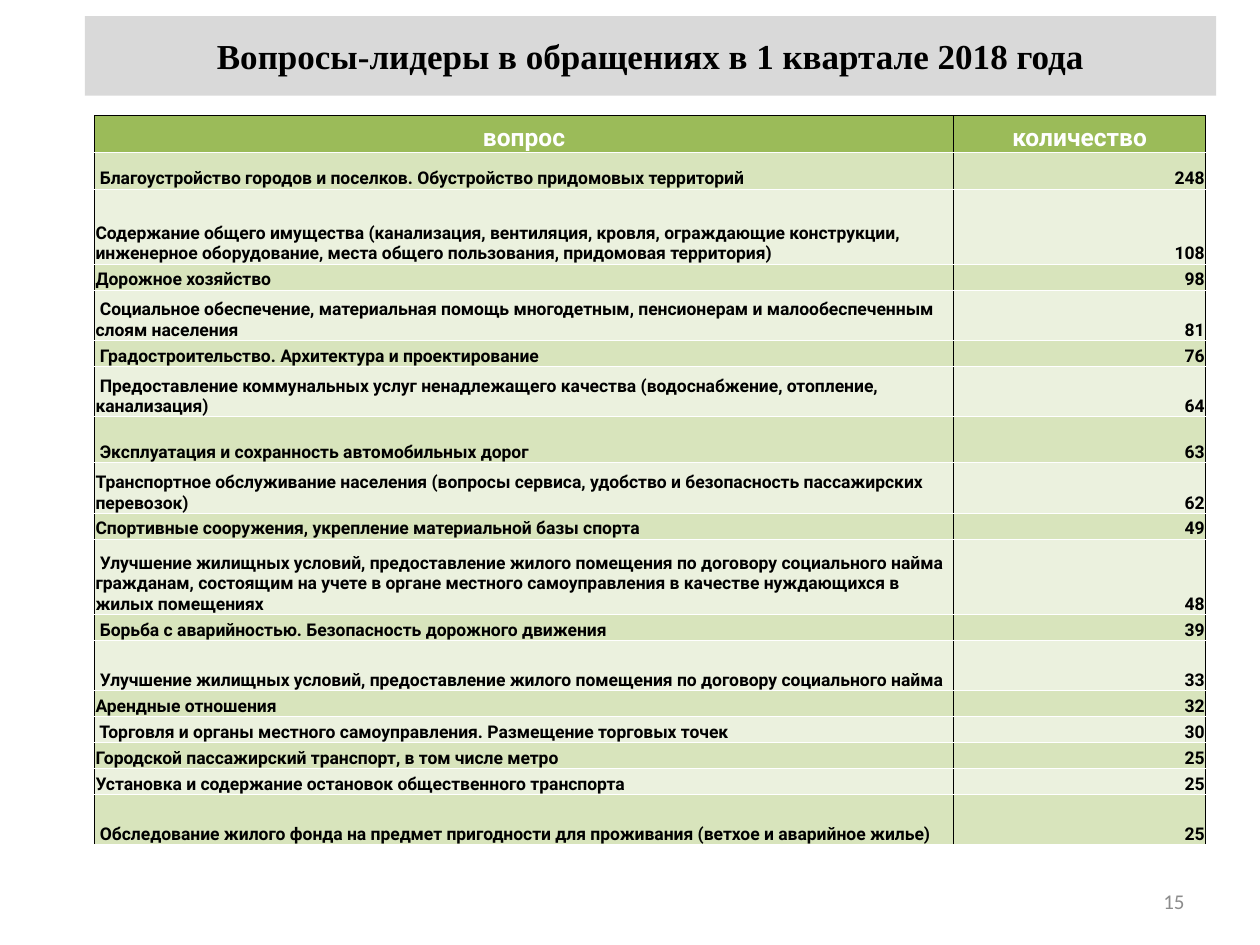
"""Build a slide with a table of the leading questions in appeals."""
import dataclasses

import pptx
import pptx.dml.color
import pptx.enum.text
import pptx.oxml
import pptx.oxml.ns
import pptx.util

Pt = pptx.util.Pt
Align = pptx.enum.text.PP_ALIGN
Anchor = pptx.enum.text.MSO_ANCHOR


@dataclasses.dataclass(frozen=True)
class Font:
    name: str
    size: float
    color: str
    bold: bool = True


@dataclasses.dataclass(frozen=True)
class Theme:
    title: Font = Font("Times New Roman", 20, "000000")
    head: Font = Font("Roboto", 14, "FFFFFF")
    body: Font = Font("Roboto", 10, "000000")
    number: Font = Font("Calibri", 12, "8C8C8C", False)
    banner: str = "D9D9D9"
    green: str = "9BBB59"
    bands: tuple[str, str] = ("D8E4BC", "EBF1DE")
    dark: str = "000000"
    light: str = "FFFFFF"


@dataclasses.dataclass(frozen=True)
class Row:
    topic: str
    count: str
    height: float


THEME = Theme()
LOW, MID, TALL = 14.8, 28.8, 43
HEAD = Row("вопрос", "количество", 21)
ROWS = [
    Row(" Благоустройство городов и поселков. Обустройство придомовых территорий", "248", 21),
    Row("Содержание общего имущества (канализация, вентиляция, кровля, ограждающие конструкции, "
        "инженерное оборудование, места общего пользования, придомовая территория)", "108", TALL),
    Row("Дорожное хозяйство", "98", LOW),
    Row(" Социальное обеспечение, материальная помощь многодетным, пенсионерам и "
        "малообеспеченным слоям населения", "81", MID),
    Row(" Градостроительство. Архитектура и проектирование", "76", LOW),
    Row(" Предоставление коммунальных услуг ненадлежащего качества (водоснабжение, отопление, "
        "канализация)", "64", MID),
    Row(" Эксплуатация и сохранность автомобильных дорог", "63", 26.4),
    Row("Транспортное обслуживание населения (вопросы сервиса, удобство и безопасность "
        "пассажирских перевозок)", "62", MID),
    Row("Спортивные сооружения, укрепление материальной базы спорта", "49", LOW),
    Row(" Улучшение жилищных условий, предоставление жилого помещения по договору социального "
        "найма гражданам, состоящим на учете в органе местного самоуправления в качестве "
        "нуждающихся в жилых помещениях", "48", TALL),
    Row(" Борьба с аварийностью. Безопасность дорожного движения", "39", LOW),
    Row(" Улучшение жилищных условий, предоставление жилого помещения по договору социального "
        "найма", "33", MID),
    Row("Арендные отношения", "32", LOW),
    Row(" Торговля и органы местного самоуправления. Размещение торговых точек", "30", LOW),
    Row("Городской пассажирский транспорт, в том числе метро", "25", LOW),
    Row("Установка и содержание остановок общественного транспорта", "25", LOW),
    Row(" Обследование жилого фонда на предмет пригодности для проживания (ветхое и аварийное "
        "жилье)", "25", MID),
]


def apply(item: object, values: dict) -> None:
    for name, value in values.items():
        setattr(item, name, value)


def rgb(color: str) -> pptx.dml.color.RGBColor:
    return pptx.dml.color.RGBColor.from_string(color)


def paint(item, color: str) -> None:
    item.fill.solid()
    item.fill.fore_color.rgb = rgb(color)


def write(frame, text: str, font: Font, align: Align) -> None:
    par = frame.paragraphs[0]
    par.alignment = align
    run = par.add_run()
    run.text = text
    apply(run.font, {"name": font.name, "size": Pt(font.size), "bold": font.bold})
    run.font.color.rgb = rgb(font.color)


def place(shape, left: float, top: float, width: float, height: float) -> None:
    apply(shape, {"left": Pt(left), "top": Pt(top), "width": Pt(width), "height": Pt(height)})


def border(cell, top: str) -> None:
    sides = {"L": THEME.dark, "R": THEME.dark, "T": top, "B": THEME.light}
    props = cell._tc.get_or_add_tcPr()
    for side, color in sides.items():
        props.append(pptx.oxml.parse_xml(
            f'<a:ln{side} {pptx.oxml.ns.nsdecls("a")} w="{Pt(0.5)}"><a:solidFill>'
            f'<a:srgbClr val="{color}"/></a:solidFill></a:ln{side}>'))


def fill_cell(cell, text: str, font: Font, align: Align, fill: str, top: str) -> None:
    edge = Pt(0.6)
    apply(cell, {"margin_left": edge, "margin_right": edge, "margin_top": edge,
                 "margin_bottom": 0, "vertical_anchor": Anchor.BOTTOM})
    border(cell, top)
    paint(cell, fill)
    write(cell.text_frame, text, font, align)


def add_grid(slide, head: Row, rows: list[Row]) -> None:
    lines = [head, *rows]
    total = sum(line.height for line in lines)
    table = slide.shapes.add_table(len(lines), 2, Pt(54), Pt(66), Pt(635), Pt(total)).table
    apply(table, {"first_row": False, "horz_banding": False})
    for col, width in zip(table.columns, (491, 144)):
        col.width = Pt(width)
    for num, line in enumerate(lines):
        table.rows[num].height = Pt(line.height)
        if num == 0:
            font, fill, top = THEME.head, THEME.green, THEME.dark
            aligns = (Align.CENTER, Align.CENTER)
        else:
            font, fill, top = THEME.body, THEME.bands[(num - 1) % 2], THEME.light
            aligns = (Align.LEFT, Align.RIGHT)
        for col, text in enumerate((line.topic, line.count)):
            fill_cell(table.cell(num, col), text, font, aligns[col], fill, top)


def main() -> None:
    deck = pptx.Presentation()
    apply(deck, {"slide_width": Pt(720), "slide_height": Pt(540)})
    slide = deck.slides.add_slide(deck.slide_layouts[5])
    frame = {"word_wrap": True, "vertical_anchor": Anchor.MIDDLE}

    title = slide.shapes.title
    place(title, 48.5, 9.2, 646.5, 45.5)
    paint(title, THEME.banner)
    apply(title.text_frame, frame)
    write(title.text_frame, "Вопросы-лидеры в обращениях в 1 квартале 2018 года",
          THEME.title, Align.CENTER)

    add_grid(slide, HEAD, ROWS)

    number = slide.shapes.add_textbox(Pt(516), Pt(500.5), Pt(168), Pt(28.8))
    apply(number.text_frame, frame)
    write(number.text_frame, "15", THEME.number, Align.RIGHT)
    deck.save("out.pptx")


if __name__ == "__main__":
    main()
